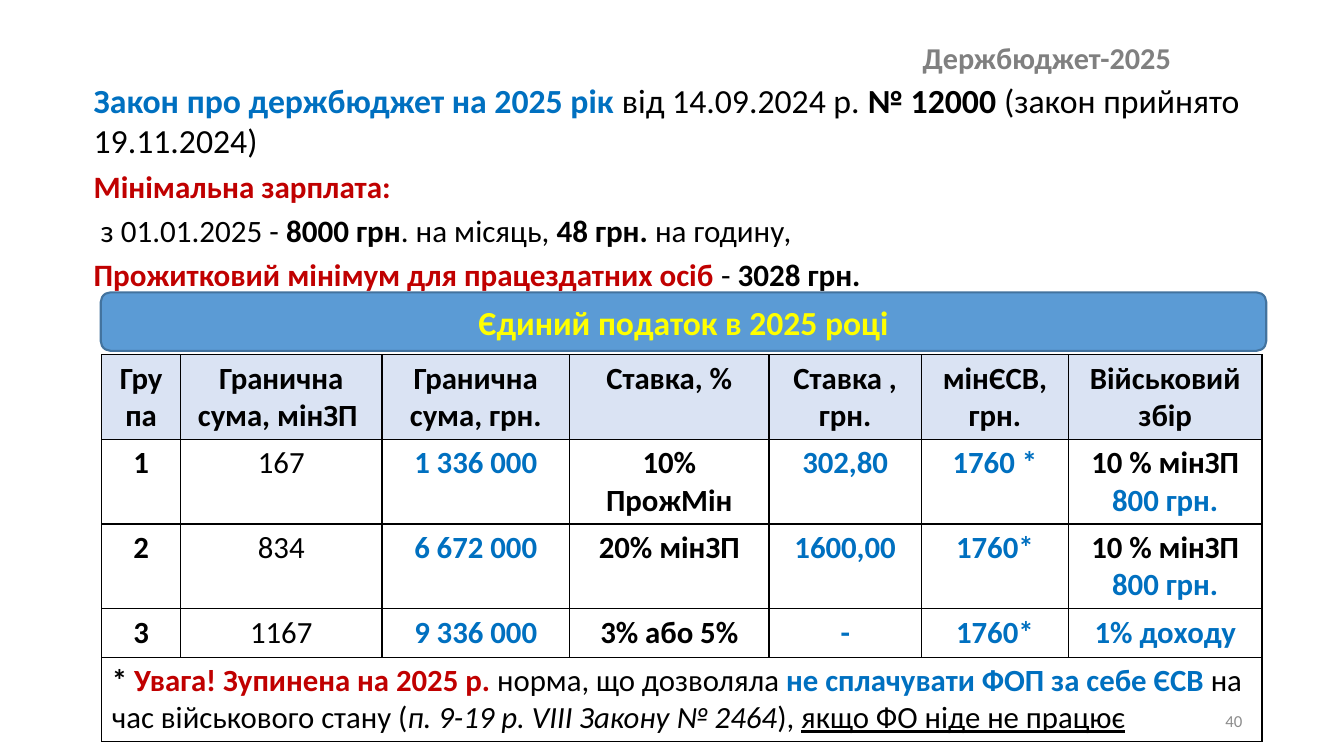
import pptx
import pptx.dml.color
import pptx.enum.shapes
import pptx.enum.text
import pptx.oxml
import pptx.oxml.ns
import pptx.util

RGBColor = pptx.dml.color.RGBColor
BLACK = RGBColor(0x00, 0x00, 0x00)
BLUE = RGBColor(0x00, 0x70, 0xC0)
RED = RGBColor(0xC0, 0x00, 0x00)
GREY = RGBColor(0x80, 0x80, 0x80)
LIGHT_GREY = RGBColor(0x8C, 0x8C, 0x8C)
YELLOW = RGBColor(0xFF, 0xFF, 0x00)
HEADER_FILL = RGBColor(0xDA, 0xE3, 0xF3)
BANNER_FILL = RGBColor(0x5B, 0x9B, 0xD5)
BANNER_LINE = RGBColor(0x43, 0x73, 0x9E)

ALIGN = pptx.enum.text.PP_ALIGN
MIDDLE = pptx.enum.text.MSO_ANCHOR.MIDDLE

presentation = pptx.Presentation()
presentation.slide_width = pptx.util.Inches(13.33)
presentation.slide_height = pptx.util.Inches(7.5)
slide = presentation.slides.add_slide(presentation.slide_layouts[5])


def place(left, top, width, height):
    """Turn percentages of the slide's width and height into lengths."""
    column = presentation.slide_width / 100
    row = presentation.slide_height / 100
    return [int(left * column), int(top * row), int(width * column), int(height * row)]


def write_runs(paragraph, size, runs, alignment=ALIGN.LEFT):
    """Add runs of (text, colour, style), style letters being b, i and u."""
    paragraph.alignment = alignment
    for text, color, style in runs:
        run = paragraph.add_run()
        run.text = text
        run.font.name = "Calibri"
        run.font.size = pptx.util.Pt(size)
        run.font.color.rgb = color
        run.font.bold = "b" in style
        run.font.italic = "i" in style
        run.font.underline = "u" in style


# Title
title = slide.shapes.title
title.left, title.top, title.width, title.height = place(67.9, 5.33, 25.3, 5.07)
title.text_frame.auto_size = pptx.enum.text.MSO_AUTO_SIZE.NONE
title.text_frame.vertical_anchor = MIDDLE
title.text_frame.paragraphs[0].line_spacing = 0.9
write_runs(title.text_frame.paragraphs[0], 21.6, [("Держбюджет-2025", GREY, "b")])

# Budget law, minimum wage and subsistence level
budget_lines = [
    (24.1, 1.0, 6, [
        ("Закон про держбюджет на 2025 рік ", BLUE, "b"),
        ("від 14.09.2024 р. ", BLACK, ""),
        ("№ 12000 ", BLACK, "b"),
        ("(закон прийнято 19.11.2024)", BLACK, ""),
    ]),
    (22.2, 0.8, 10, [("Мінімальна зарплата:", RED, "b")]),
    (22.2, 0.8, 10, [
        (" з 01.01.2025 - ", BLACK, ""),
        ("8000 грн", BLACK, "b"),
        (". на місяць, ", BLACK, ""),
        ("48 грн. ", BLACK, "b"),
        ("на годину,", BLACK, ""),
    ]),
    (22.2, 0.8, 10, [
        ("Прожитковий мінімум для працездатних осіб ", RED, "b"),
        ("- ", BLACK, ""),
        ("3028 грн.", BLACK, "b"),
    ]),
]
budget_frame = slide.shapes.add_textbox(*place(6.23, 9.87, 88, 29.47)).text_frame
budget_frame.word_wrap = True
for index, (size, line_spacing, space_before, runs) in enumerate(budget_lines):
    paragraph = budget_frame.add_paragraph() if index else budget_frame.paragraphs[0]
    paragraph.line_spacing = line_spacing
    paragraph.space_before = pptx.util.Pt(space_before)
    write_runs(paragraph, size, runs)

# Slide number
number_frame = slide.shapes.add_textbox(*place(70.67, 92.67, 22.5, 5.33)).text_frame
number_frame.word_wrap = True
number_frame.vertical_anchor = MIDDLE
write_runs(number_frame.paragraphs[0], 12, [("40", LIGHT_GREY, "")], ALIGN.RIGHT)

# Single tax table
headers = ["Група", "Гранична сума, мінЗП ", "Гранична сума, грн.", "Ставка, %",
           "Ставка , грн.", "мінЄСВ, грн.", "Військовий збір"]
groups = [
    ["1", "167", "1 336 000", "10% ПрожМін", "302,80", "1760 *", "10 % мінЗП\n800 грн."],
    ["2", "834", "6 672 000", "20% мінЗП", "1600,00", "1760*", "10 % мінЗП\n800 грн."],
    ["3", "1167", "9 336 000", "3% або 5%", "-", "1760*", "1% доходу"],
]
group_styles = [(BLACK, "b"), (BLACK, ""), (BLUE, "b"), (BLACK, "b"),
                (BLUE, "b"), (BLUE, "b"), (BLUE, "b")]
note_runs = [
    ("* ", BLACK, "b"),
    ("Увага! Зупинена на 2025 р. ", RED, "b"),
    ("норма, що дозволяла ", BLACK, ""),
    ("не сплачувати ФОП за себе ЄСВ ", BLUE, "b"),
    ("на час військового стану (", BLACK, ""),
    ("п. 9-19 р. VІІІ Закону № 2464", BLACK, "i"),
    ("), ", BLACK, ""),
    ("якщо ФО ніде не працює", BLACK, "u"),
]
column_shares = [5.85, 15, 13.95, 14.85, 11.33, 10.95, 14.4]
row_shares = [11.2, 11.2, 11.2, 6.4, 11.2]
table = slide.shapes.add_table(
    len(row_shares), len(column_shares),
    *place(7.58, 46.93, sum(column_shares), sum(row_shares))).table
table.first_row = False
table.horz_banding = False
for column, share in zip(table.columns, column_shares):
    column.width = int(presentation.slide_width * share / 100)
for row, share in zip(table.rows, row_shares):
    row.height = int(presentation.slide_height * share / 100)

for cell in table.iter_cells():
    properties = cell._tc.get_or_add_tcPr()
    for side in ("lnL", "lnR", "lnT", "lnB"):
        properties.append(pptx.oxml.parse_xml(
            f'<a:{side} {pptx.oxml.ns.nsdecls("a")} w="12700"><a:solidFill>'
            f'<a:srgbClr val="{BLACK}"/></a:solidFill></a:{side}>'))
    cell.fill.background()

for row_index, texts in enumerate([headers] + groups):
    for column_index, text in enumerate(texts):
        cell = table.cell(row_index, column_index)
        color, style = group_styles[column_index]
        if row_index == 0:
            color, style = BLACK, "b"
            cell.fill.solid()
            cell.fill.fore_color.rgb = HEADER_FILL
        lines = text.split("\n")
        for line_index, line in enumerate(lines):
            frame = cell.text_frame
            paragraph = frame.add_paragraph() if line_index else frame.paragraphs[0]
            line_color = BLACK if line_index < len(lines) - 1 else color
            write_runs(paragraph, 22, [(line, line_color, style)], ALIGN.CENTER)

note_cell = table.cell(4, 0)
note_cell.merge(table.cell(4, 6))
write_runs(note_cell.text_frame.paragraphs[0], 22, note_runs)

# Banner above the table
banner = slide.shapes.add_shape(
    pptx.enum.shapes.MSO_SHAPE.ROUNDED_RECTANGLE, *place(7.5, 38.67, 86.72, 7.73))
banner.shadow.inherit = False
banner.fill.solid()
banner.fill.fore_color.rgb = BANNER_FILL
banner.line.color.rgb = BANNER_LINE
banner.line.width = pptx.util.Pt(1.5)
banner.text_frame.vertical_anchor = MIDDLE
write_runs(banner.text_frame.paragraphs[0], 24,
           [("Єдиний податок в 2025 році", YELLOW, "b")], ALIGN.CENTER)

presentation.save("out.pptx")
